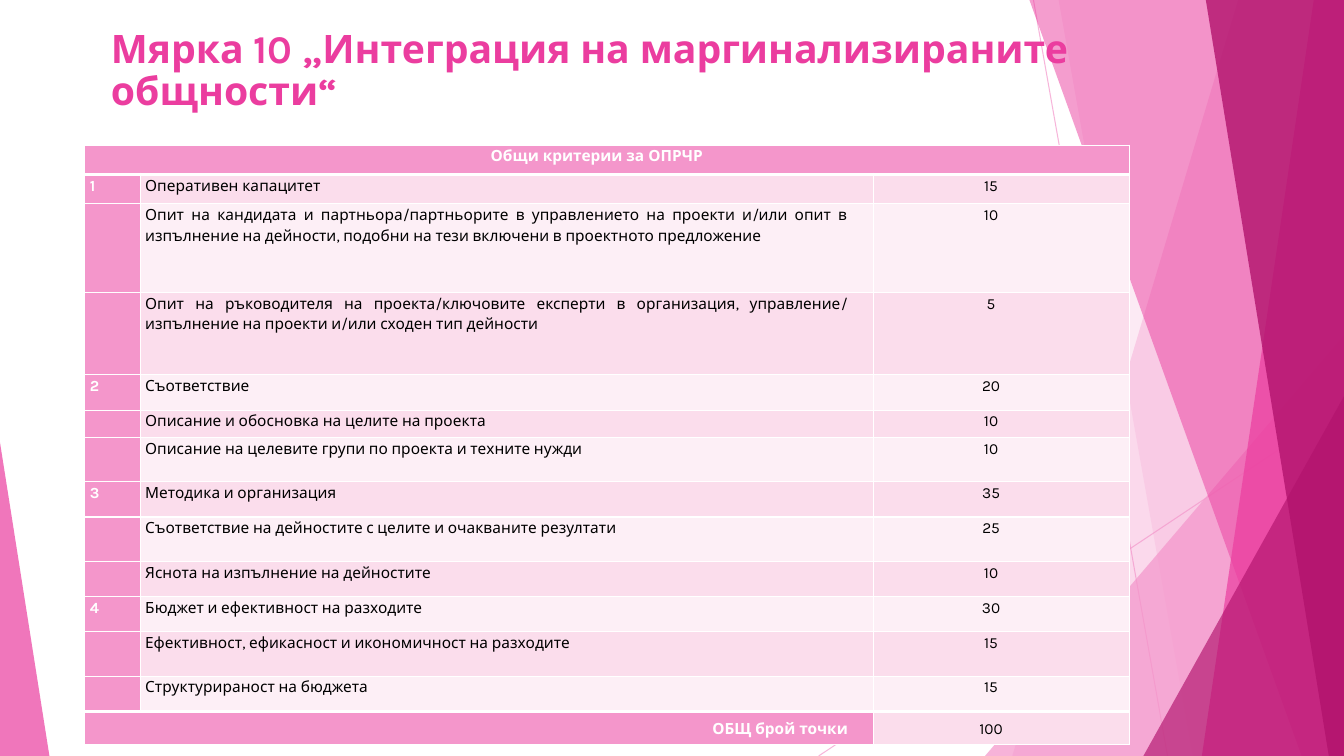
import pptx
import pptx.util
import pptx.dml.color
import pptx.enum.shapes
import pptx.enum.text
import pptx.oxml.ns
from lxml import etree

Inches = pptx.util.Inches
Pt = pptx.util.Pt
ALIGN = pptx.enum.text.PP_ALIGN
ANCHOR = pptx.enum.text.MSO_ANCHOR

WIDTH, HEIGHT = 13.33, 7.5
FONT = "Karla"
COLORS = {
    "title": "EB3D9F",
    "light": "F496CB",
    "bright": "EB3D9F",
    "dark": "B2136D",
    "white": "FFFFFF",
    "black": "000000",
    "odd_band": "FBDDEC",
    "even_band": "FDEFF6",
}

TITLE = "Мярка 10 „Интеграция на маргинализираните общности“"
HEADER = "Общи критерии за ОПРЧР"
TOTAL = ("ОБЩ брой точки", "100")
# number, criterion, points, row height
CRITERIA = [
    ("1", "Оперативен капацитет", "15", 0.29),
    ("", "Опит на кандидата и партньора/партньорите в управлението на проекти и/или "
         "опит в изпълнение на дейности, подобни на тези включени в проектното предложение",
     "10", 0.88),
    ("", "Опит на ръководителя на проекта/ключовите експерти в организация, управление/ "
         "изпълнение на проекти и/или сходен тип дейности", "5", 0.82),
    ("2", "Съответствие", "20", 0.35),
    ("", "Описание и обосновка на целите на проекта", "10", 0.27),
    ("", "Описание на целевите групи по проекта и техните нужди", "10", 0.44),
    ("3", "Методика и организация", "35", 0.35),
    ("", "Съответствие на дейностите с целите и очакваните резултати", "25", 0.44),
    ("", "Яснота на изпълнение на дейностите", "10", 0.35),
    ("4", "Бюджет и ефективност на разходите", "30", 0.35),
    ("", "Ефективност, ефикасност и икономичност на разходите", "15", 0.44),
    ("", "Структурираност на бюджета", "15", 0.35),
]
HEADER_HEIGHT, TOTAL_HEIGHT = 0.29, 0.33
COLUMN_WIDTHS = [0.55, 7.27, 2.54]


def rgb(name):
    return pptx.dml.color.RGBColor.from_string(COLORS[name])


def add_xml(parent, tag, **attributes):
    return etree.SubElement(parent, pptx.oxml.ns.qn(tag), attributes)


def set_opacity(element, percent):
    color = element.find(".//" + pptx.oxml.ns.qn("a:srgbClr"))
    add_xml(color, "a:alpha", val=str(percent * 1000))


def paint(shape, color, opacity):
    shape.shadow.inherit = False
    shape.fill.solid()
    shape.fill.fore_color.rgb = rgb(color)
    shape.line.fill.background()
    set_opacity(shape.element.spPr, opacity)


def add_ray(slide, start, end):
    points = [Inches(value) for value in (*start, *end)]
    line = slide.shapes.add_connector(pptx.enum.shapes.MSO_CONNECTOR.STRAIGHT, *points)
    line.line.color.rgb = rgb("light")
    line.line.width = Pt(0.75)
    properties = line.element.spPr
    set_opacity(properties, 70)
    add_xml(properties, "a:effectLst")


def add_facet(slide, top_left, top_right, bottom_left, color, opacity):
    """Add a full-height panel that ends at the right edge of the slide."""
    corners = [(top_left, 0), (top_right, 0), (WIDTH, HEIGHT), (bottom_left, HEIGHT)]
    points = [(Inches(x), Inches(y)) for x, y in corners]
    builder = slide.shapes.build_freeform(*points[0])
    builder.add_line_segments(points[1:], close=True)
    paint(builder.convert_to_shape(), color, opacity)


def add_corner(slide, left, top, width, apex, color, opacity):
    """Add a triangle that stands on the bottom edge of the slide."""
    triangle = slide.shapes.add_shape(
        pptx.enum.shapes.MSO_SHAPE.ISOSCELES_TRIANGLE,
        Inches(left), Inches(top), Inches(width), Inches(HEIGHT - top))
    triangle.adjustments[0] = apex
    paint(triangle, color, opacity)


def add_backdrop(slide):
    add_ray(slide, (10.25, 0), (11.58, HEIGHT))
    add_ray(slide, (WIDTH, 4.03), (8.12, HEIGHT))
    add_facet(slide, 12.28, WIDTH, 10.04, "light", 36)
    add_facet(slide, 10.5, WIDTH, 11.83, "light", 20)
    add_corner(slide, 9.77, 3.33, 3.56, 1, "light", 72)
    add_facet(slide, 10.21, WIDTH, 12.91, "bright", 50)
    add_facet(slide, 13.03, WIDTH, 11.92, "bright", 70)
    add_facet(slide, 11.96, WIDTH, 13.18, "dark", 80)
    add_corner(slide, 11.34, 3.93, 1.99, 1, "dark", 66)
    add_corner(slide, 0, 4.39, 0.49, 0, "bright", 70)


def place_title(slide, left, top, width, height):
    title = slide.shapes.title
    title.element.getparent().append(title.element)  # in front of the backdrop
    title.left, title.top = Inches(left), Inches(top)
    title.width, title.height = Inches(width), Inches(height)
    frame = title.text_frame
    frame.text = TITLE
    frame.word_wrap = True
    frame.auto_size = pptx.enum.text.MSO_AUTO_SIZE.NONE
    frame.vertical_anchor = ANCHOR.TOP
    paragraph = frame.paragraphs[0]
    paragraph.alignment = ALIGN.LEFT
    paragraph.line_spacing = 0.9
    font = paragraph.font
    font.name, font.size, font.bold = FONT, Pt(28), True
    font.color.rgb = rgb("title")


def set_borders(cell, top, bottom):
    properties = cell._tc.get_or_add_tcPr()
    for side, points in (("L", 1), ("R", 1), ("T", top), ("B", bottom)):
        line = add_xml(properties, "a:ln" + side, w=str(Pt(points)))
        add_xml(add_xml(line, "a:solidFill"), "a:srgbClr", val=COLORS["white"])


def fill_cell(cell, text, alignment, fill, heading=False, anchor=ANCHOR.TOP):
    cell.fill.solid()
    cell.fill.fore_color.rgb = rgb(fill)
    cell.margin_left = Inches(0.05)
    cell.margin_right = Inches(0.25)
    cell.margin_top = cell.margin_bottom = 0
    cell.vertical_anchor = anchor
    paragraph = cell.text_frame.paragraphs[0]
    paragraph.alignment = alignment
    paragraph.line_spacing = 1.15
    font = paragraph.font
    font.name, font.size, font.bold = FONT, Pt(11), heading
    font.color.rgb = rgb("white" if heading else "black")
    if text:
        paragraph.add_run().text = text
    else:
        add_xml(paragraph._p, "a:endParaRPr", sz="1100")


def add_criteria_table(slide, left, top):
    heights = [HEADER_HEIGHT, *(row[3] for row in CRITERIA), TOTAL_HEIGHT]
    table = slide.shapes.add_table(
        len(heights), len(COLUMN_WIDTHS), Inches(left), Inches(top),
        Inches(sum(COLUMN_WIDTHS)), Inches(sum(heights))).table
    table.first_row = table.horz_banding = False
    for column, width in zip(table.columns, COLUMN_WIDTHS):
        column.width = Inches(width)

    last = len(heights) - 1
    for index, height in enumerate(heights):
        table.rows[index].height = Inches(height)
        for cell in table.rows[index].cells:
            set_borders(cell, top=3 if index in (1, last) else 1,
                        bottom=3 if index in (0, last - 1) else 1)

    table.cell(0, 0).merge(table.cell(0, 2))
    fill_cell(table.cell(0, 0), HEADER, ALIGN.CENTER, "light", heading=True)
    for index, (number, criterion, points, _) in enumerate(CRITERIA, start=1):
        band = "odd_band" if index % 2 else "even_band"
        fill_cell(table.cell(index, 0), number, ALIGN.JUSTIFY, "light", heading=True)
        fill_cell(table.cell(index, 1), criterion, ALIGN.JUSTIFY, band)
        fill_cell(table.cell(index, 2), points, ALIGN.CENTER, band)
    table.cell(last, 0).merge(table.cell(last, 1))
    label, points = TOTAL
    fill_cell(table.cell(last, 0), label, ALIGN.RIGHT, "light", True, ANCHOR.MIDDLE)
    fill_cell(table.cell(last, 2), points, ALIGN.CENTER, "odd_band", False, ANCHOR.MIDDLE)


def main():
    presentation = pptx.Presentation()
    presentation.slide_width = Inches(WIDTH)
    presentation.slide_height = Inches(HEIGHT)
    slide = presentation.slides.add_slide(presentation.slide_layouts[5])
    add_backdrop(slide)
    place_title(slide, 1, 0.24, 9.92, 1.19)
    add_criteria_table(slide, 0.84, 1.44)
    presentation.save("out.pptx")


if __name__ == "__main__":
    main()
